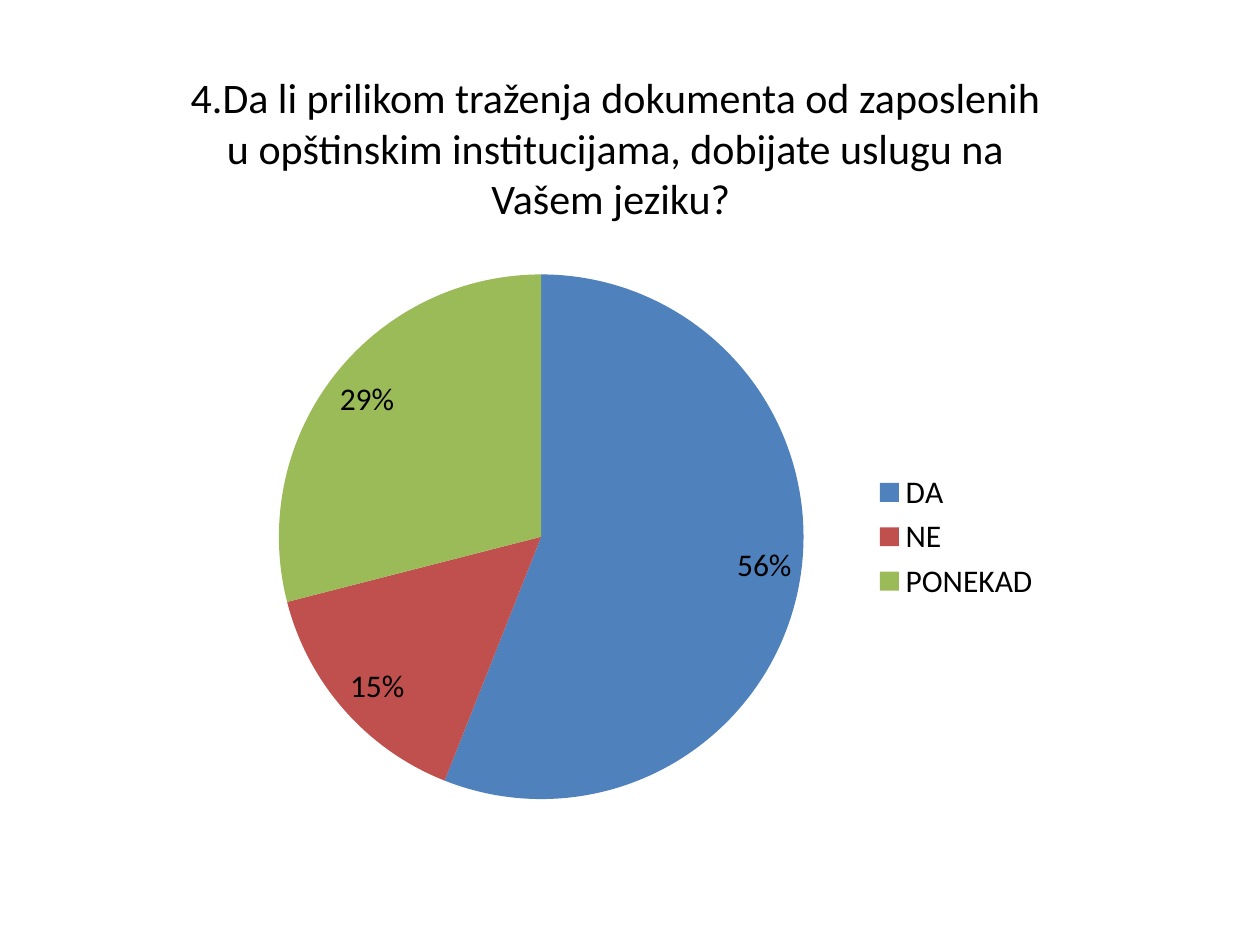
from dataclasses import dataclass

from pptx import Presentation
from pptx.chart.data import CategoryChartData
from pptx.dml.color import RGBColor
from pptx.enum.chart import XL_CHART_TYPE, XL_LABEL_POSITION, XL_LEGEND_POSITION
from pptx.enum.text import MSO_ANCHOR, PP_ALIGN
from pptx.util import Inches, Pt

PIE = XL_CHART_TYPE.PIE
INSIDE_END = XL_LABEL_POSITION.INSIDE_END
LEGEND_RIGHT = XL_LEGEND_POSITION.RIGHT
CENTER = PP_ALIGN.CENTER
TOP = MSO_ANCHOR.TOP

TITLE_ONLY_LAYOUT = 5
FONT = "Calibri"
COLORS = {
    "background": "FFFFFF",
    "text": "000000",
    "yes": "4F81BD",
    "no": "C0504D",
    "sometimes": "9BBB59",
}
QUESTION = (
    "4.Da li prilikom traženja dokumenta od zaposlenih u opštinskim "
    "institucijama, dobijate uslugu na Vašem jeziku? "
)


@dataclass(frozen=True)
class Answer:
    label: str
    percent: int
    color: str


ANSWERS = [
    Answer("DA", 56, "yes"),
    Answer("NE", 15, "no"),
    Answer("PONEKAD", 29, "sometimes"),
]


def color(name: str) -> RGBColor:
    return RGBColor.from_string(COLORS[name])


def format_font(font, size: int) -> None:
    font.name = FONT
    font.size = Pt(size)
    font.color.rgb = color("text")


def write_question(slide) -> None:
    title = slide.shapes.title
    title.left, title.top = Inches(1.3), Inches(0.52)
    title.width, title.height = Inches(7.17), Inches(1.31)
    frame = title.text_frame
    frame.word_wrap = True
    frame.vertical_anchor = TOP
    paragraph = frame.paragraphs[0]
    paragraph.alignment = CENTER
    run = paragraph.add_run()
    run.text = QUESTION
    format_font(run.font, 24)


def add_answer_pie(slide, answers: list[Answer]) -> None:
    data = CategoryChartData(number_format="0")
    data.categories = [answer.label for answer in answers]
    data.add_series("Series 1", [answer.percent for answer in answers])
    chart = slide.shapes.add_chart(
        PIE, Inches(1.69), Inches(2.04), Inches(6.67), Inches(4.44), data
    ).chart
    format_font(chart.font, 18)
    chart.has_title = False
    chart.has_legend = True
    chart.legend.position = LEGEND_RIGHT
    chart.legend.include_in_layout = False

    plot = chart.plots[0]
    plot.vary_by_categories = True
    for index, answer in enumerate(answers):
        fill = plot.series[0].points[index].format.fill
        fill.solid()
        fill.fore_color.rgb = color(answer.color)

    plot.has_data_labels = True
    labels = plot.data_labels
    labels.show_percentage = True
    labels.show_value = False
    labels.number_format = "0%"
    labels.number_format_is_linked = False
    labels.position = INSIDE_END
    format_font(labels.font, 18)


def main() -> None:
    presentation = Presentation()
    presentation.slide_width = Inches(10)
    presentation.slide_height = Inches(7.5)
    slide = presentation.slides.add_slide(
        presentation.slide_layouts[TITLE_ONLY_LAYOUT]
    )
    background = slide.background.fill
    background.solid()
    background.fore_color.rgb = color("background")
    write_question(slide)
    add_answer_pie(slide, ANSWERS)
    presentation.save("out.pptx")


if __name__ == "__main__":
    main()
